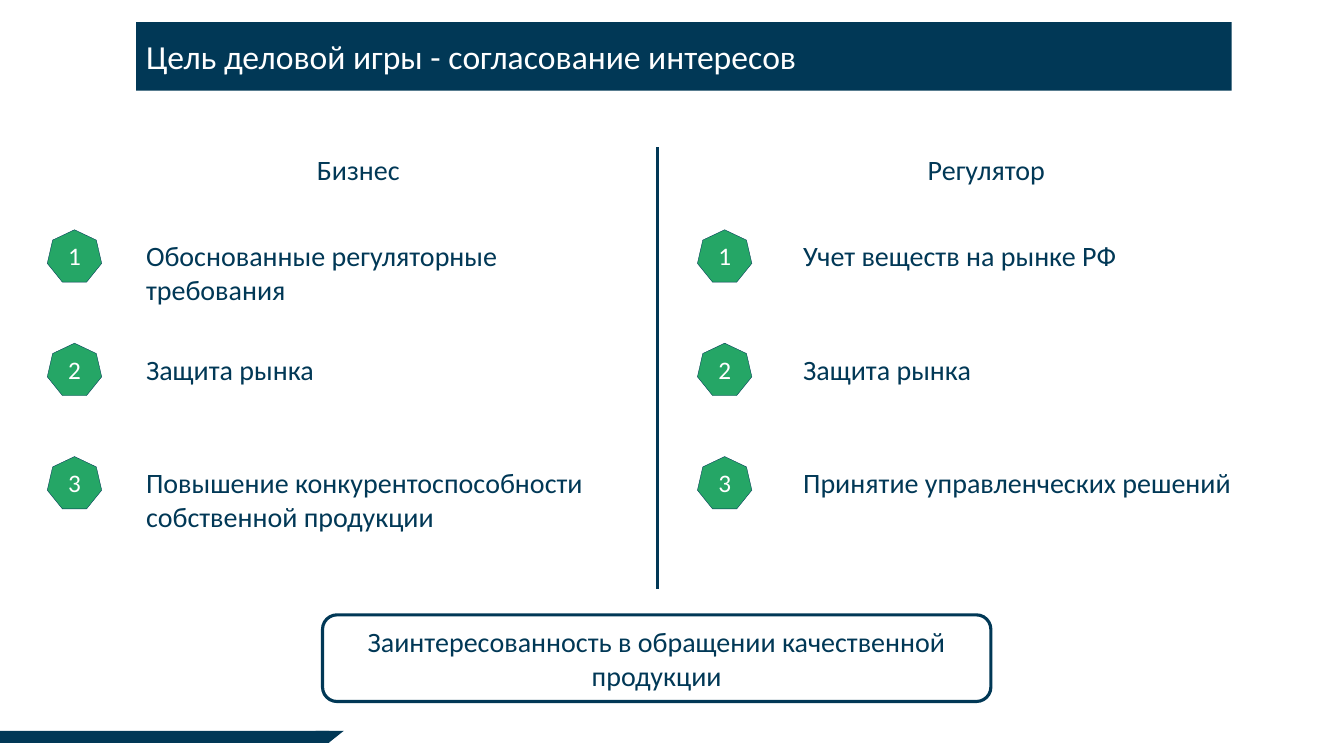
from lxml import etree
from pptx import Presentation
from pptx import util as u
from pptx.dml.color import RGBColor
from pptx.enum import shapes, text
from pptx.oxml import ns

NAVY = RGBColor(0x01, 0x38, 0x56)
GREEN = RGBColor(0x25, 0xA6, 0x66)
WHITE = RGBColor(0xFF, 0xFF, 0xFF)
LEFT, CENTER = text.PP_ALIGN.LEFT, text.PP_ALIGN.CENTER
TOP, MIDDLE = text.MSO_ANCHOR.TOP, text.MSO_ANCHOR.MIDDLE
PRESET = shapes.MSO_SHAPE


class SlideBuilder:
    """Holds the style and the current slide; all lengths are points."""

    font_name = "Calibri"
    body_size = 20

    def __init__(self, slide):
        self.slide = slide

    def set_words(self, shape, words, size, color, align=LEFT, anchor=TOP):
        frame = shape.text_frame
        frame.text = words
        frame.word_wrap = True
        frame.auto_size = text.MSO_AUTO_SIZE.NONE
        frame.vertical_anchor = anchor
        paragraph = frame.paragraphs[0]
        paragraph.alignment = align
        font = paragraph.runs[0].font
        font.name, font.size = self.font_name, u.Pt(size)
        font.color.rgb = color

    def title(self, words, left, top, width, height):
        title = self.slide.shapes.title
        title.left, title.top = u.Pt(left), u.Pt(top)
        title.width, title.height = u.Pt(width), u.Pt(height)
        title.fill.solid()
        title.fill.fore_color.rgb = NAVY
        self.set_words(title, words, 24, WHITE, anchor=MIDDLE)

    def label(self, words, left, top, width, height, align=LEFT):
        box = self.slide.shapes.add_textbox(
            u.Pt(left), u.Pt(top), u.Pt(width), u.Pt(height))
        self.set_words(box, words, self.body_size, NAVY, align)

    def shape(self, preset, left, top, width, height, fill=None, line=None):
        shape = self.slide.shapes.add_shape(
            preset, u.Pt(left), u.Pt(top), u.Pt(width), u.Pt(height))
        shape.shadow.inherit = False
        if fill is None:
            shape.fill.background()
        else:
            shape.fill.solid()
            shape.fill.fore_color.rgb = fill
        if line is None:
            shape.line.fill.background()
        else:
            shape.line.color.rgb = NAVY
            shape.line.width = u.Pt(line)
        return shape

    def badge(self, number, left, top):
        badge = self.shape(PRESET.HEPTAGON, left, top, 38.9, 37.4, GREEN, 0.25)
        self.set_words(badge, str(number), 18, WHITE, CENTER, MIDDLE)

    def divider(self, x, top, bottom):
        line = self.slide.shapes.add_connector(
            shapes.MSO_CONNECTOR.STRAIGHT, u.Pt(x), u.Pt(top), u.Pt(x), u.Pt(bottom))
        line.line.color.rgb = NAVY
        line.line.width = u.Pt(2.25)
        properties = line.element.find(ns.qn("p:spPr"))
        etree.SubElement(properties, ns.qn("a:effectLst"))


# Heading, heading left, badge left, text left, interests
COLUMNS = [
    ("Бизнес", 140.4, 33.8, 97.2,
     ["Обоснованные регуляторные требования",
      "Защита рынка",
      "Повышение конкурентоспособности собственной продукции"]),
    ("Регулятор", 589, 498.2, 566.6,
     ["Учет веществ на рынке РФ",
      "Защита рынка",
      "Принятие управленческих решений"]),
]
COLUMN_TOP = 105.1
ROW_TOP, ROW_PITCH = 167, 81


def main():
    presentation = Presentation()
    presentation.slide_width, presentation.slide_height = u.Pt(960), u.Pt(540)
    slide = presentation.slides.add_slide(presentation.slide_layouts[5])
    builder = SlideBuilder(slide)

    # Title bar and bottom corner
    builder.title("Цель деловой игры - согласование интересов", 97.2, 15.8, 782.6, 49)
    corner = builder.shape(PRESET.ISOSCELES_TRIANGLE, 225.4, 522, 20.2, 8, NAVY)
    corner.rotation = 180
    builder.shape(PRESET.RECTANGLE, 0, 522, 235.4, 8.6, NAVY)

    # Two columns of interests
    for heading, heading_left, badge_left, text_left, interests in COLUMNS:
        builder.label(heading, heading_left, COLUMN_TOP, 231.1, 31.7, CENTER)
        for row, interest in enumerate(interests):
            top = ROW_TOP + row * ROW_PITCH
            builder.badge(row + 1, badge_left, top - 2.9)
            builder.label(interest, text_left, top, 339.1, 55.4)
    builder.divider(469.4, COLUMN_TOP, 420.5)

    # Shared interest
    shared = builder.shape(PRESET.ROUNDED_RECTANGLE, 230.4, 439.2, 477.4, 61.9, line=2.25)
    builder.set_words(shared, "Заинтересованность в обращении качественной продукции",
                      builder.body_size, NAVY, CENTER, MIDDLE)

    presentation.save("out.pptx")


if __name__ == "__main__":
    main()
